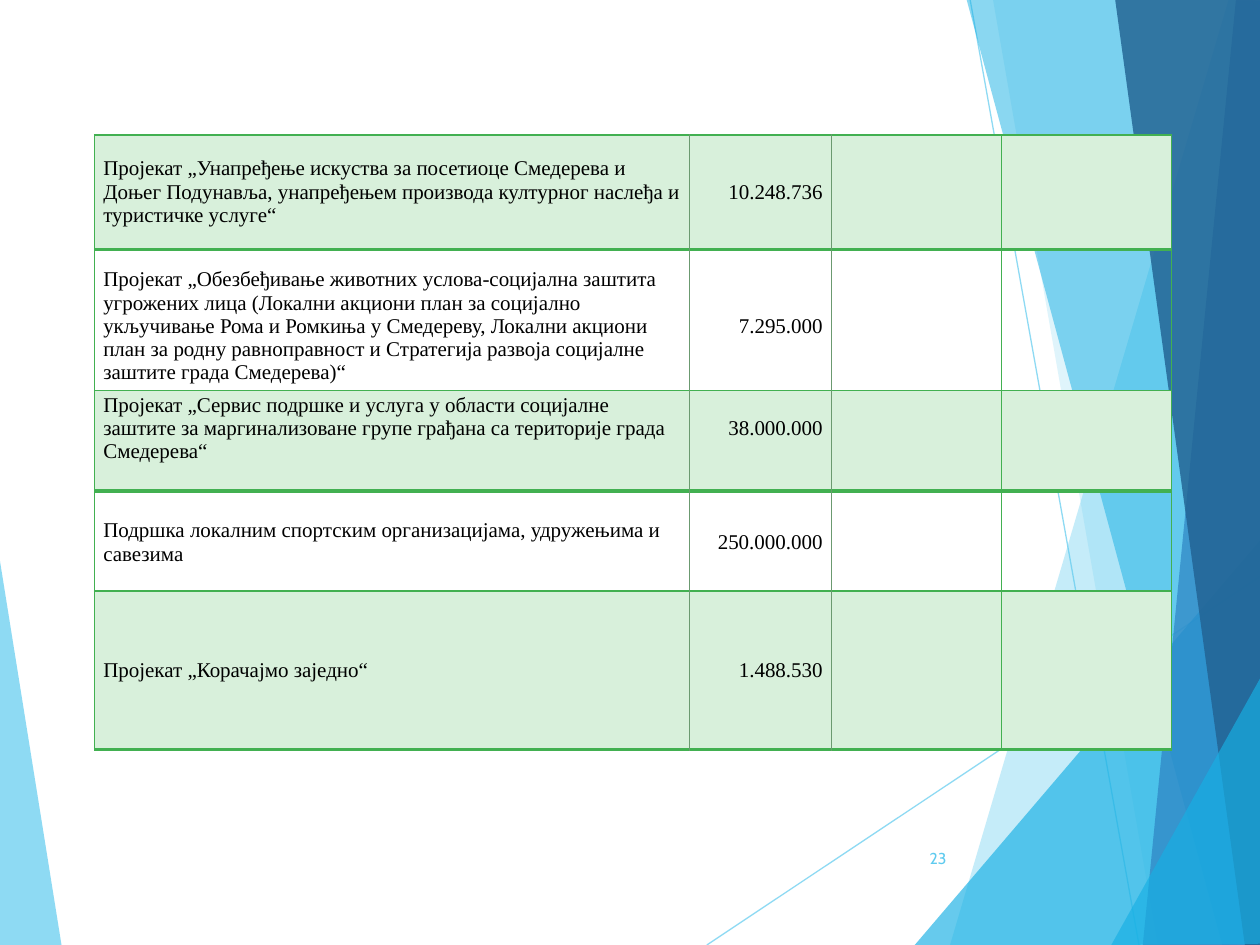
from dataclasses import dataclass

from lxml import etree
from pptx import Presentation
from pptx.dml.color import RGBColor
from pptx.enum import shapes, text
from pptx.oxml import ns
from pptx.util import Inches, Pt

SKY = RGBColor(0x5F, 0xCB, 0xEF)
CYAN = RGBColor(0x17, 0xB0, 0xE4)
BLUE = RGBColor(0x2E, 0x83, 0xC3)
NAVY = RGBColor(0x22, 0x62, 0x92)
GREEN = RGBColor(0x42, 0xB0, 0x51)
GREY_GREEN = RGBColor(0x6B, 0x9A, 0x70)
MINT = RGBColor(0xD8, 0xF0, 0xDB)
BLACK = RGBColor(0, 0, 0)

TABLE_LEFT = 0.75
COLUMNS = (4.72, 1.13, 1.35, 1.35)


@dataclass
class Facet:
    color: RGBColor
    opacity: int
    points: list[tuple[float, float]]


@dataclass
class Ray:
    start: tuple[float, float]
    end: tuple[float, float]


@dataclass
class Project:
    name: str
    amount: str
    top: float
    height: float
    shaded: bool = True
    bottom_margin: float = 0


RAYS = [Ray((5.61, 7.5), (10.01, 4.57)), Ray((7.7, 0), (9.04, 7.5))]

LEFT_FACET = Facet(SKY, 70, [(-0.01, 4.39), (0.49, 7.51), (-0.01, 7.5)])
RIGHT_FACETS = [
    Facet(SKY, 36, [(9.75, 0), (7.54, 7.5), (10.02, 7.51), (10.01, 0.01)]),
    Facet(SKY, 20, [(7.88, -0.01), (9.19, 7.5), (10.01, 7.5), (10.01, -0.01)]),
    Facet(CYAN, 66, [(7.26, 7.5), (10, 4.29), (10.01, 7.5)]),
    Facet(CYAN, 50, [(7.67, -0.01), (9.7, 7.5), (10.01, 7.49), (10.01, -0.01)]),
    Facet(BLUE, 70, [(9.81, -0.01), (9.07, 7.5), (10.01, 7.5), (10, -0.01)]),
    Facet(NAVY, 82, [(8.85, -0.01), (9.88, 7.5), (10.02, 7.5), (10, -0.01)]),
    Facet(CYAN, 66, [(8.82, 7.5), (10.02, 5.35), (10.02, 7.49)]),
]

PROJECTS = [
    Project("Пројекат „Обезбеђивање животних услова-социјална заштита угрожених лица "
            "(Локални акциони план за социјално укључивање Рома и Ромкиња у Смедереву, "
            "Локални акциони план за родну равноправност и Стратегија развоја социјалне "
            "заштите града Смедерева)“", "7.295.000", 1.98, 1.22, shaded=False),
    Project("Пројекат „Унапређење искуства за посетиоце Смедерева и Доњег Подунавља, "
            "унапређењем производа културног наслеђа и туристичке услуге“",
            "10.248.736", 1.07, 0.91),
    Project("Пројекат „Сервис подршке и услуга у области социјалне заштите за "
            "маргинализоване групе грађана са територије града Смедерева“",
            "38.000.000", 3.1, 0.76, bottom_margin=0.19),
    Project("Подршка локалним спортским организацијама, удружењима и савезима",
            "250.000.000", 3.91, 0.79, shaded=False),
    Project("Пројекат „Корачајмо заједно“", "1.488.530", 4.69, 1.26),
]


def set_opacity(shape, percent: int) -> None:
    """Make every colour of a shape's own fill or line partly transparent."""
    for color in shape._element.spPr.iter(ns.qn("a:srgbClr")):
        etree.SubElement(color, ns.qn("a:alpha"), val=str(percent * 1000))


def draw_facet(s, facet: Facet) -> None:
    points = [(Inches(x), Inches(y)) for x, y in facet.points]
    builder = s.shapes.build_freeform(*points[0])
    builder.add_line_segments(points[1:], close=True)
    sp = builder.convert_to_shape()
    sp.shadow.inherit = False
    sp.fill.solid()
    sp.fill.fore_color.rgb = facet.color
    sp.line.fill.background()
    set_opacity(sp, facet.opacity)


def draw_ray(s, ray: Ray) -> None:
    ends = [Inches(v) for v in (*ray.start, *ray.end)]
    line = s.shapes.add_connector(shapes.MSO_CONNECTOR.STRAIGHT, *ends)
    line.line.color.rgb = SKY
    line.line.width = Pt(0.75)
    set_opacity(line, 70)
    etree.SubElement(line._element.spPr, ns.qn("a:effectLst"))


def write(tf, words: str, align, font: dict) -> None:
    p = tf.paragraphs[0]
    p.alignment = align
    r = p.add_run()
    r.text = words
    r.font.color.rgb = font["color"]
    for key in ("name", "size"):
        setattr(r.font, key, font[key])


def set_borders(cell, column: int) -> None:
    """Green frame; thin muted rules on both sides of the amount column."""
    left = (GREY_GREEN, 0.5) if column in (1, 2) else (GREEN, 1)
    right = (GREY_GREEN, 0.5) if column in (0, 1) else (GREEN, 1)
    sides = {"lnL": left, "lnR": right, "lnT": (GREEN, 1), "lnB": (GREEN, 2)}
    tc_pr = cell._tc.get_or_add_tcPr()
    for i, (side, (color, width)) in enumerate(sides.items()):
        ln = etree.Element(ns.qn(f"a:{side}"), w=str(Pt(width)))
        fill = etree.SubElement(ln, ns.qn("a:solidFill"))
        etree.SubElement(fill, ns.qn("a:srgbClr"), val=str(color))
        tc_pr.insert(i, ln)


def draw_project(s, project: Project) -> None:
    table = s.shapes.add_table(
        1, len(COLUMNS), Inches(TABLE_LEFT), Inches(project.top),
        Inches(sum(COLUMNS)), Inches(project.height)).table
    table.first_row = table.horz_banding = False
    font = {"name": "Times New Roman", "size": Pt(12), "color": BLACK}
    margins = {"margin_left": 0.07, "margin_right": 0.07, "margin_top": 0,
               "margin_bottom": project.bottom_margin}
    contents = [(project.name, text.PP_ALIGN.LEFT), (project.amount, text.PP_ALIGN.RIGHT)]
    for i, width in enumerate(COLUMNS):
        table.columns[i].width = Inches(width)
        cell = table.cell(0, i)
        if project.shaded:
            cell.fill.solid()
            cell.fill.fore_color.rgb = MINT
        else:
            cell.fill.background()
        set_borders(cell, i)
        if i < len(contents):
            cell.vertical_anchor = text.MSO_ANCHOR.MIDDLE
            for key, value in margins.items():
                setattr(cell, key, Inches(value))
            write(cell.text_frame, *contents[i], font)


def draw_page_number(s) -> None:
    box = s.shapes.add_textbox(Inches(7.05), Inches(6.61), Inches(0.56), Inches(0.4))
    tf = box.text_frame
    tf.word_wrap = True
    tf.vertical_anchor = text.MSO_ANCHOR.MIDDLE
    write(tf, "23", text.PP_ALIGN.RIGHT, {"name": "Cabin", "size": Pt(9), "color": SKY})


def main() -> None:
    prs = Presentation()
    prs.slide_width, prs.slide_height = Inches(10), Inches(7.5)
    s = prs.slides.add_slide(prs.slide_layouts[6])
    draw_facet(s, LEFT_FACET)
    for ray in RAYS:
        draw_ray(s, ray)
    for facet in RIGHT_FACETS:
        draw_facet(s, facet)
    draw_page_number(s)
    for project in PROJECTS:
        draw_project(s, project)
    prs.save("out.pptx")


if __name__ == "__main__":
    main()
